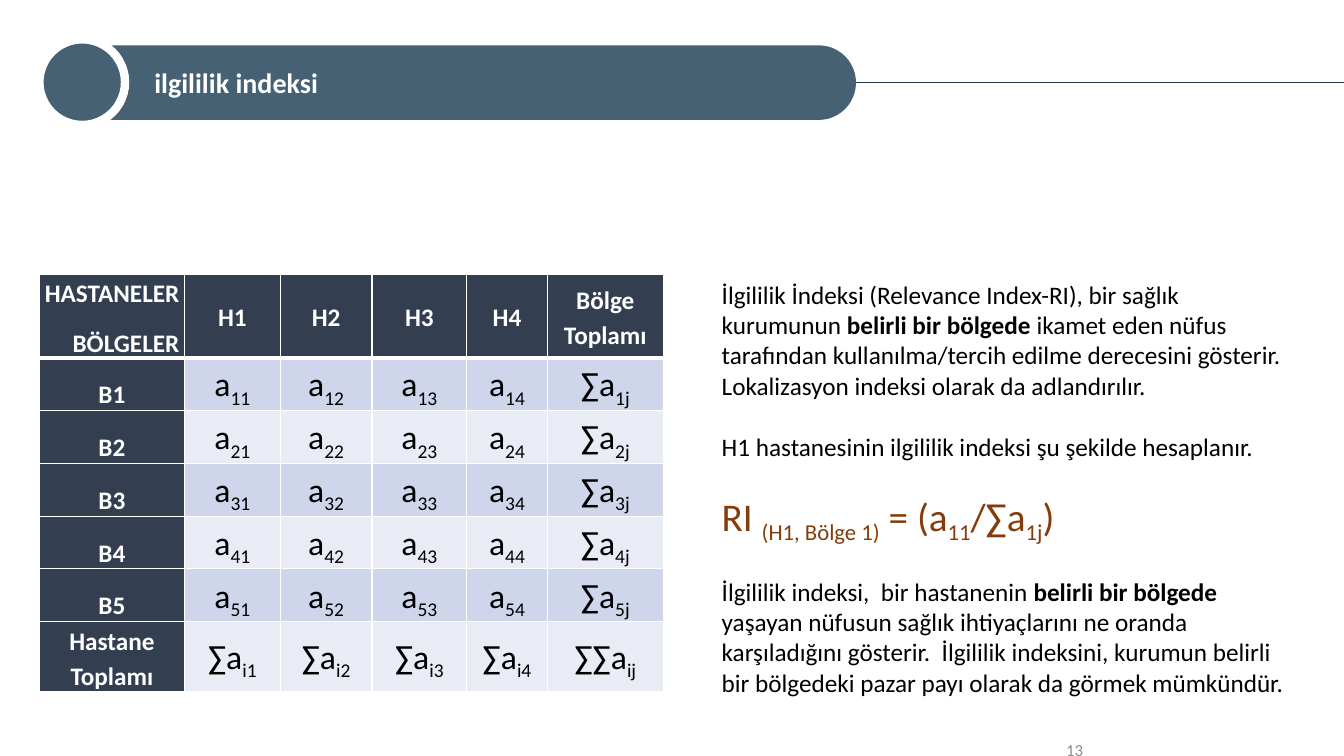
from lxml.etree import SubElement
from pptx import Presentation
from pptx.dml.color import RGBColor
from pptx.enum.shapes import MSO_CONNECTOR, MSO_SHAPE
from pptx.enum.text import MSO_ANCHOR, MSO_AUTO_SIZE, PP_ALIGN
from pptx.oxml.ns import qn
from pptx.util import Inches, Pt

COLORS = {"bar": "456173", "rule": "1B3C59", "head": "333F50", "odd": "CFD5EA", "even": "E9EBF5",
          "white": "FFFFFF", "black": "000000", "grey": "8C8C8C", "formula": "843C0B"}
BOLD = {"bold": True}
SUB = {"baseline": "-25000"}
COLUMNS, ROWS = 133.3, 75


def rgb(name):
    return RGBColor.from_string(COLORS[name])


def apply(obj, values):
    for key, value in values.items():
        setattr(obj, key, value)


class Deck:
    """Draws styled elements on the current slide, measured in grid columns and rows."""

    font = "Calibri"

    def __init__(self, prs):
        self.prs = prs
        self.slide = prs.slides.add_slide(prs.slide_layouts[5])
        self.shapes = self.slide.shapes

    def x(self, columns):
        return int(self.prs.slide_width * columns / COLUMNS)

    def y(self, rows):
        return int(self.prs.slide_height * rows / ROWS)

    def box(self, left, top, width, height):
        return self.x(left), self.y(top), self.x(width), self.y(height)

    def add_runs(self, p, text, size=18, color="black", bold=False, accent=None, **layout):
        apply(p, layout)
        for i, part in enumerate(text.split("|")):
            r = p.add_run()
            r.text = part
            style = dict(accent or {}) if i % 2 else {}
            baseline = style.pop("baseline", None)
            apply(r.font, {"name": self.font, "size": Pt(size), "bold": bold, **style})
            r.font.color.rgb = rgb(color)
            if baseline:
                r.font._element.set("baseline", baseline)

    def shape(self, kind, place, fill, line=None, width=0):
        sp = self.shapes.add_shape(kind, *self.box(*place))
        sp.shadow.inherit = False
        sp.fill.solid()
        sp.fill.fore_color.rgb = rgb(fill)
        if line:
            sp.line.color.rgb = rgb(line)
            sp.line.width = Pt(width)
        else:
            sp.line.fill.background()
        return sp

    def title(self, place, text, indent):
        sp = self.shapes.title
        self.shapes._spTree.append(sp._element)
        apply(sp, dict(zip(("left", "top", "width", "height"), self.box(*place))))
        apply(sp.text_frame, {"margin_left": self.x(indent), "word_wrap": True,
                              "auto_size": MSO_AUTO_SIZE.NONE, "vertical_anchor": MSO_ANCHOR.MIDDLE})
        self.add_runs(sp.text_frame.paragraphs[0], text, 20, "white", True, alignment=PP_ALIGN.LEFT)

    def line(self, x1, x2, row, color, width):
        ln = self.shapes.add_connector(MSO_CONNECTOR.STRAIGHT, self.x(x1), self.y(row), self.x(x2), self.y(row))
        ln.line.color.rgb = rgb(color)
        ln.line.width = Pt(width)
        SubElement(ln._element.spPr, qn("a:effectLst"))

    def text(self, place, paragraphs, **frame):
        tf = self.shapes.add_textbox(*self.box(*place)).text_frame
        apply(tf, {"word_wrap": True, **frame})
        for i, (text, style) in enumerate(paragraphs):
            self.add_runs(tf.add_paragraph() if i else tf.paragraphs[0], text, **style)

    def borders(self, cell, bottom):
        tc_pr = cell._tc.get_or_add_tcPr()
        for side, width in (("L", 1), ("R", 1), ("T", 1), ("B", bottom)):
            ln = SubElement(tc_pr, qn(f"a:ln{side}"), w=str(Pt(width)))
            SubElement(SubElement(ln, qn("a:solidFill")), qn("a:srgbClr"), val=COLORS["white"])

    def table(self, place, widths, heights, rows):
        frame = self.shapes.add_table(len(rows), len(widths), *self.box(*place))
        table = frame.table
        for column, width in zip(table.columns, widths):
            column.width = self.x(width)
        for row, height in zip(table.rows, heights):
            row.height = self.y(height)
        frame.height = self.y(place[3])
        for i, row in enumerate(rows):
            for j, text in enumerate(row):
                self.cell(table.cell(i, j), text, i, j, i in (0, len(rows) - 1))

    def cell(self, cell, text, i, j, middle):
        head = i == 0 or j == 0
        self.borders(cell, 1 if i else 3)
        cell.fill.solid()
        cell.fill.fore_color.rgb = rgb("head" if head else "odd" if i % 2 else "even")
        apply(cell, {"margin_left": Inches(0.05), "margin_right": Inches(0.05),
                     "margin_top": 0, "margin_bottom": 0,
                     "vertical_anchor": MSO_ANCHOR.MIDDLE if middle else MSO_ANCHOR.BOTTOM})
        style = {"size": 18, "color": "white", "bold": True} if head else {"size": 24, "accent": SUB}
        tf = cell.text_frame
        for n, line in enumerate(text.split("\n")):
            self.add_runs(tf.add_paragraph() if n else tf.paragraphs[0], line, **style,
                          alignment=PP_ALIGN.CENTER if i or j else PP_ALIGN.RIGHT,
                          line_spacing=1.15, space_after=Pt(10))


def main():
    prs = Presentation()
    prs.slide_width, prs.slide_height = Inches(13.33), Inches(7.5)
    deck = Deck(prs)

    bar = (3.9, 4.5, 81, 7.4)
    deck.text((78.4, 72.4, 30, 4), [("13", {"size": 12, "color": "grey", "alignment": PP_ALIGN.RIGHT})],
              vertical_anchor=MSO_ANCHOR.MIDDLE)
    deck.shape(MSO_SHAPE.ROUNDED_RECTANGLE, bar, "bar").adjustments[0] = 0.5
    deck.shape(MSO_SHAPE.OVAL, (3.9, 3.9, 8.5, 8.5), "bar", "white", 6)
    deck.title(bar, "ilgililik indeksi", 11.4)
    deck.line(84.9, COLUMNS, 8.2, "rule", 0.5)

    gap = {"space_before": Pt(22)}
    deck.text((70.6, 27.2, 58.9, 42.1), [
        ("İlgililik İndeksi (Relevance Index-RI), bir sağlık kurumunun |belirli bir bölgede |ikamet eden nüfus "
         "tarafından kullanılma/tercih edilme derecesini gösterir. Lokalizasyon indeksi olarak da adlandırılır.",
         {"accent": BOLD}),
        ("H1 hastanesinin ilgililik indeksi şu şekilde hesaplanır.", gap),
        ("RI |(H1, Bölge 1)| = (a|11|/∑a|1j|)", {"size": 28, "color": "formula", "accent": SUB, **gap}),
        ("İlgililik indeksi,  bir hastanenin |belirli bir bölgede |yaşayan nüfusun sağlık ihtiyaçlarını ne oranda "
         "karşıladığını gösterir.  İlgililik indeksini, kurumun belirli bir bölgedeki pazar payı olarak da görmek "
         "mümkündür.", {"accent": BOLD, **gap}),
    ], auto_size=MSO_AUTO_SIZE.SHAPE_TO_FIT_TEXT)

    hospitals, regions = range(1, 5), range(1, 6)
    rows = [["HASTANELER\nBÖLGELER", *(f"H{h}" for h in hospitals), "Bölge Toplamı"]]
    rows += [[f"B{b}", *(f"a|{b}{h}" for h in hospitals), f"∑a|{b}j"] for b in regions]
    rows += [["Hastane Toplamı", *(f"∑a|i{h}" for h in hospitals), "∑∑a|ij"]]
    deck.table((3.9, 27.2, 61.8, 36.4), [14.4, 9.5, 9.1, 9.4, 8, 11.5],
               [7.1] + [3.3] * len(regions) + [4.9], rows)

    prs.save("out.pptx")


if __name__ == "__main__":
    main()
